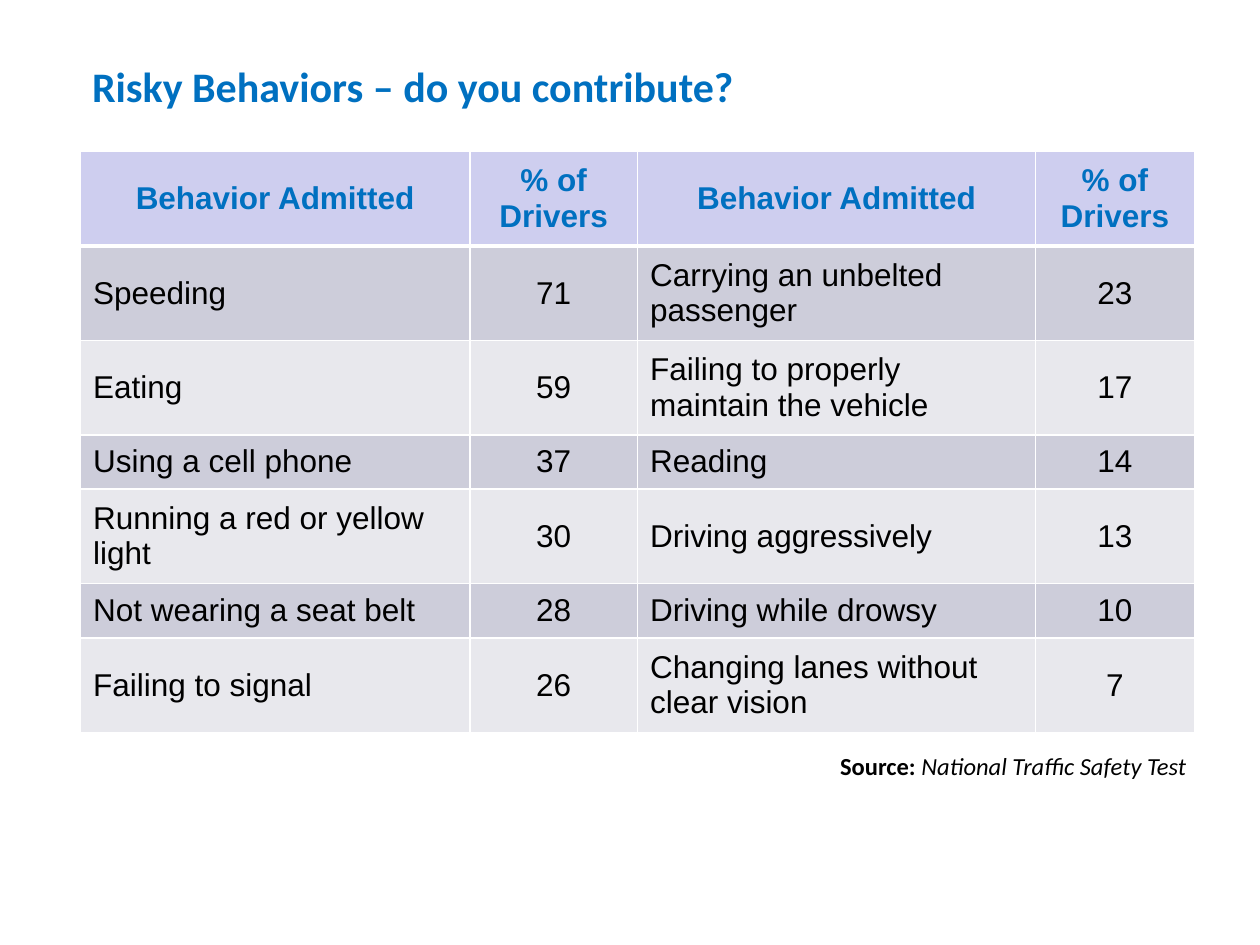
from typing import NamedTuple

from lxml.etree import SubElement
from pptx import Presentation
from pptx.dml.color import RGBColor
from pptx.enum.text import MSO_ANCHOR as Anchor, PP_ALIGN as Align
from pptx.oxml.ns import qn
from pptx.util import Pt

BLUE, BLACK, WHITE = "0070C0", "000000", "FFFFFF"
HEADER_FILL, BAND_FILLS = "CECEEF", ("CDCDDA", "E8E8ED")
COLUMN_WIDTHS = (222.5, 95.8, 227.5, 90.7)
TALL, SHORT = 54, 31
ROW_HEIGHTS = (TALL, TALL, TALL, SHORT, TALL, SHORT, TALL)
HEADERS = ("Behavior Admitted", "% of Drivers") * 2


class Behavior(NamedTuple):
    name: str
    percent: int


class TextRun(NamedTuple):
    text: str
    size: float
    color: str
    bold: bool = False
    italic: bool = False


class Box(NamedTuple):
    left: float
    top: float
    width: float
    height: float


BEHAVIORS = (
    Behavior("Speeding", 71),
    Behavior("Eating", 59),
    Behavior("Using a cell phone", 37),
    Behavior("Running a red or yellow light", 30),
    Behavior("Not wearing a seat belt", 28),
    Behavior("Failing to signal", 26),
    Behavior("Carrying an unbelted passenger", 23),
    Behavior("Failing to properly maintain the vehicle", 17),
    Behavior("Reading", 14),
    Behavior("Driving aggressively", 13),
    Behavior("Driving while drowsy", 10),
    Behavior("Changing lanes without clear vision", 7),
)


def rgb(color: str) -> RGBColor:
    return RGBColor.from_string(color)


def add_run(p, run: TextRun, font: str) -> None:
    r = p.add_run()
    r.text = run.text
    r.font.name, r.font.size = font, Pt(run.size)
    r.font.bold, r.font.italic = run.bold, run.italic
    r.font.color.rgb = rgb(run.color)


def add_text(s, box: Box, runs: tuple[TextRun, ...], anchor: Anchor) -> None:
    tf = s.shapes.add_textbox(*map(Pt, box)).text_frame
    tf.word_wrap = True
    tf.vertical_anchor = anchor
    for run in runs:
        add_run(tf.paragraphs[0], run, "Calibri")


def set_borders(cell, top: float, bottom: float) -> None:
    """Draw white cell borders; call before filling the cell."""
    tc_pr = cell._tc.get_or_add_tcPr()
    for tag, width in (("lnL", 1), ("lnR", 1), ("lnT", top), ("lnB", bottom)):
        ln = SubElement(tc_pr, qn(f"a:{tag}"), w=str(Pt(width)))
        SubElement(SubElement(ln, qn("a:solidFill")), qn("a:srgbClr"), val=WHITE)


def fill_cell(cell, row: int, col: int, text: str) -> None:
    header = row == 0
    set_borders(cell, top=3 if row == 1 else 1, bottom=3 if header else 1)
    cell.fill.solid()
    cell.fill.fore_color.rgb = rgb(HEADER_FILL if header else BAND_FILLS[(row - 1) % 2])
    cell.vertical_anchor = Anchor.MIDDLE
    p = cell.text_frame.paragraphs[0]
    p.alignment = Align.CENTER if header or col % 2 else Align.LEFT
    add_run(p, TextRun(text, 18, BLUE if header else BLACK, bold=header), "Arial")


def add_behavior_table(s, left: float, top: float) -> None:
    box = Box(left, top, sum(COLUMN_WIDTHS), sum(ROW_HEIGHTS))
    table = s.shapes.add_table(len(ROW_HEIGHTS), len(COLUMN_WIDTHS), *map(Pt, box)).table
    for column, width in zip(table.columns, COLUMN_WIDTHS):
        column.width = Pt(width)
    for table_row, height in zip(table.rows, ROW_HEIGHTS):
        table_row.height = Pt(height)
    half = len(BEHAVIORS) // 2
    pairs = zip(BEHAVIORS[:half], BEHAVIORS[half:])
    rows = [HEADERS, *(first + second for first, second in pairs)]
    for row, values in enumerate(rows):
        for col, value in enumerate(values):
            fill_cell(table.cell(row, col), row, col, str(value))


def main() -> None:
    prs = Presentation()
    prs.slide_width, prs.slide_height = Pt(720), Pt(540)
    s = prs.slides.add_slide(prs.slide_layouts[6])
    title = TextRun("Risky Behaviors – do you contribute?", 24, BLUE, bold=True)
    add_text(s, Box(45.5, 32.5, 402.5, 34.5), (title,), Anchor.BOTTOM)
    add_behavior_table(s, 46, 86.5)
    source = (
        TextRun("Source: ", 14, BLACK, bold=True),
        TextRun("National Traffic Safety Test", 14, BLACK, italic=True),
    )
    add_text(s, Box(473, 425.5, 215.5, 24.5), source, Anchor.TOP)
    prs.save("out.pptx")


if __name__ == "__main__":
    main()
